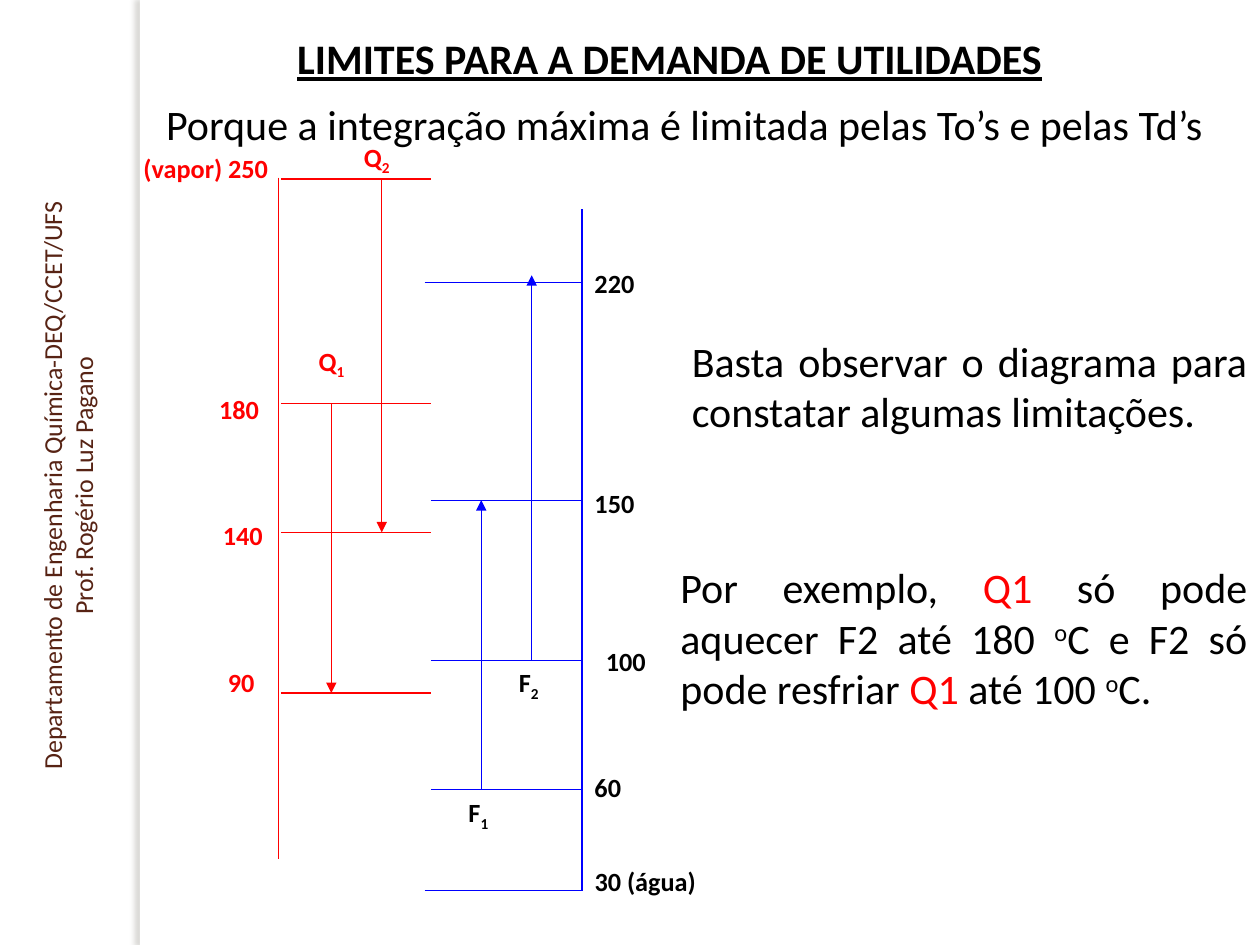
from dataclasses import dataclass

import lxml.etree
import pptx
import pptx.dml.color
import pptx.enum.shapes
import pptx.enum.text
import pptx.oxml.ns
import pptx.util

COLUMNS, ROWS = 100, 75
HOTTEST, HOTTEST_ROW, ROWS_PER_DEGREE = 250, 14.2, 0.255
ALIGN = pptx.enum.text.PP_ALIGN
ANCHOR = pptx.enum.text.MSO_ANCHOR


@dataclass(frozen=True)
class Theme:
    font: str = "Calibri"
    hot: str = "FF0000"
    cold: str = "0000FF"
    ink: str = "000000"
    paper: str = "FFFFFF"
    credit: str = "572314"
    shadow: str = "736F63"
    body_size: float = 24
    label_size: float = 15
    credit_size: float = 14.8
    thin: float = 0.75
    axis: float = 1


@dataclass(frozen=True)
class Box:
    column: float
    row: float
    columns: float
    rows: float


@dataclass(frozen=True)
class Run:
    text: str
    color: str = Theme.ink
    baseline: int = 0


@dataclass(frozen=True)
class Label:
    box: Box
    text: str
    color: str = Theme.ink
    subscript: str = ""


@dataclass(frozen=True)
class Level:
    temperature: float
    start: float
    end: float
    color: str
    drop: float = 0


@dataclass(frozen=True)
class Stream:
    column: float
    supply: float
    target: float
    color: str


HOT, COLD = Theme.hot, Theme.cold

LEVELS = [Level(temperature, 22.3, 34.2, HOT) for temperature in (250, 180, 140, 90)]
LEVELS += [Level(temperature, 34.2, 46.1, COLD) for temperature in (150, 100, 60)]
LEVELS += [Level(220, 33.7, 46.2, COLD, 0.55), Level(30, 33.7, 46.2, COLD, 0.4)]

STREAMS = [
    Stream(26.3, 180, 90, HOT),
    Stream(30.3, 250, 140, HOT),
    Stream(38.2, 60, 150, COLD),
    Stream(42.2, 100, 220, COLD),
]

LABELS = [
    Label(Box(10.4, 11.6, 12.9, 3.8), "(vapor) 250", HOT),
    Label(Box(16.4, 30.7, 6, 5.1), "180", HOT),
    Label(Box(16.7, 40.7, 6, 3.8), "140", HOT),
    Label(Box(17.1, 52.4, 5, 5.1), "90", HOT),
    Label(Box(24.3, 26.9, 5, 5.1), "Q", HOT, "1"),
    Label(Box(27.9, 10.7, 4.6, 3.3), "Q", HOT, "2"),
    Label(Box(36.2, 62.7, 5, 5.1), "F", subscript="1"),
    Label(Box(40.2, 52.4, 5, 5.1), "F", subscript="2"),
    Label(Box(46.2, 20.7, 6, 5.1), "220"),
    Label(Box(46.2, 38.2, 6, 3.8), "150"),
    Label(Box(47.1, 50.7, 6, 5.1), "100"),
    Label(Box(46.2, 60.7, 5, 5.1), "60"),
    Label(Box(46.2, 68.2, 10.9, 3.4), "30 (água)"),
]

EXAMPLE = [
    Run("Por exemplo, "), Run("Q1", HOT), Run(" só pode aquecer F2 até 180 "),
    Run("o", baseline=30), Run("C e F2 só pode resfriar "), Run("Q1", HOT),
    Run(" até 100 "), Run("o", baseline=30), Run("C."),
]


def column_at(column: float) -> int:
    return round(pptx.util.Inches(10) * column / COLUMNS)


def row_at(row: float) -> int:
    return round(pptx.util.Inches(7.5) * row / ROWS)


def temperature_row(temperature: float) -> float:
    return HOTTEST_ROW + (HOTTEST - temperature) * ROWS_PER_DEGREE


def rgb(color: str) -> pptx.dml.color.RGBColor:
    return pptx.dml.color.RGBColor.from_string(color)


def extent(box: Box) -> tuple[int, int, int, int]:
    return column_at(box.column), row_at(box.row), column_at(box.columns), row_at(box.rows)


def apply(target, values: dict) -> None:
    for name, value in values.items():
        setattr(target, name, value)


def write(shape, paragraphs: list[list[Run]], size: float, align=ALIGN.LEFT,
          anchor=ANCHOR.TOP, **emphasis) -> None:
    frame = shape.text_frame
    apply(frame, {"word_wrap": True, "vertical_anchor": anchor,
                  "auto_size": pptx.enum.text.MSO_AUTO_SIZE.NONE})
    font_format = {"name": Theme.font, "size": pptx.util.Pt(size), **emphasis}
    for index, runs in enumerate(paragraphs):
        paragraph = frame.add_paragraph() if index else frame.paragraphs[0]
        apply(paragraph, {"alignment": align, "space_before": pptx.util.Pt(0)})
        if shape.is_placeholder:
            properties = paragraph._p.get_or_add_pPr()
            properties.set("marL", "0")
            properties.set("indent", "0")
            lxml.etree.SubElement(properties, pptx.oxml.ns.qn("a:buNone"))
        for item in runs:
            for index_line, line in enumerate(item.text.split("\n")):
                if index_line:
                    paragraph.add_line_break()
                run = paragraph.add_run()
                run.text = line
                apply(run.font, font_format)
                run.font.color.rgb = rgb(item.color)
                if item.baseline:
                    run._r.get_or_add_rPr().set("baseline", str(item.baseline * 1000))


def place(shape, box: Box):
    apply(shape, dict(zip(("left", "top", "width", "height"), extent(box))))
    return shape


def draw_line(slide, start: tuple[float, float], end: tuple[float, float],
              color: str, width: float, arrow: bool = False) -> None:
    connector = slide.shapes.add_connector(
        pptx.enum.shapes.MSO_CONNECTOR.STRAIGHT,
        column_at(start[0]), row_at(start[1]), column_at(end[0]), row_at(end[1]))
    connector.line.color.rgb = rgb(color)
    connector.line.width = pptx.util.Pt(width)
    if arrow:
        lxml.etree.SubElement(connector.line._get_or_add_ln(),
                              pptx.oxml.ns.qn("a:tailEnd"), type="triangle")
    lxml.etree.SubElement(connector._element.spPr, pptx.oxml.ns.qn("a:effectLst"))


def draw_side_band(slide) -> None:
    band = slide.shapes.add_shape(pptx.enum.shapes.MSO_SHAPE.RECTANGLE,
                                  *extent(Box(11.1, 0, 0.8, ROWS)))
    band.shadow.inherit = False
    band.fill.solid()
    band.fill.fore_color.rgb = rgb(Theme.paper)
    band.line.fill.background()
    effects = band._element.spPr.find(pptx.oxml.ns.qn("a:effectLst"))
    distance = str(pptx.util.Pt(3))
    shadow = lxml.etree.SubElement(effects, pptx.oxml.ns.qn("a:outerShdw"), blurRad=distance,
                                   dist=distance, dir="10800000", rotWithShape="0")
    color = lxml.etree.SubElement(shadow, pptx.oxml.ns.qn("a:srgbClr"), val=Theme.shadow)
    lxml.etree.SubElement(color, pptx.oxml.ns.qn("a:alpha"), val="25000")
    credit = slide.shapes.add_textbox(*extent(Box(2, 10.4, 6.3, 56.3)))
    write(credit, [[Run("Departamento de Engenharia Química-DEQ/CCET/UFS", Theme.credit)],
                   [Run("Prof. Rogério Luz Pagano", Theme.credit)]],
          Theme.credit_size, ALIGN.CENTER, ANCHOR.BOTTOM)
    credit.text_frame._txBody.bodyPr.set("vert", "vert270")


def draw_diagram(slide) -> None:
    for level in LEVELS:
        row = temperature_row(level.temperature) + level.drop
        draw_line(slide, (level.start, row), (level.end, row), level.color, Theme.thin)
    for column, top, color in ((22.1, 14.1, HOT), (46.2, 16.6, COLD)):
        draw_line(slide, (column, top), (column, top + 54.1), color, Theme.axis)
    for stream in STREAMS:
        draw_line(slide, (stream.column, temperature_row(stream.supply)),
                  (stream.column, temperature_row(stream.target)),
                  stream.color, Theme.thin, arrow=True)
    for label in LABELS:
        runs = [Run(label.text, label.color)]
        if label.subscript:
            runs.append(Run(label.subscript, label.color, -25))
        write(slide.shapes.add_textbox(*extent(label.box)), [runs], Theme.label_size, bold=True)


def main() -> None:
    presentation = pptx.Presentation()
    apply(presentation, {"slide_width": column_at(COLUMNS), "slide_height": row_at(ROWS)})
    slide = presentation.slides.add_slide(presentation.slide_layouts.get_by_name("Two Content"))
    title, remark, example = slide.placeholders
    write(place(title, Box(12.5, 2.1, 81.3, 5)), [[Run("LIMITES PARA A DEMANDA DE UTILIDADES")]],
          Theme.body_size, ALIGN.CENTER, bold=True, underline=True)
    write(place(remark, Box(53.9, 26.1, 46.1, 9.1)),
          [[Run("Basta observar o diagrama para\nconstatar algumas limitações.")]],
          Theme.body_size, ALIGN.JUSTIFY)
    write(place(example, Box(53, 44.1, 47, 13.1)), [EXAMPLE], Theme.body_size, ALIGN.JUSTIFY)
    draw_side_band(slide)
    draw_diagram(slide)
    reason = slide.shapes.add_textbox(*extent(Box(12.2, 7.3, 87.8, 5)))
    write(reason, [[Run("Porque a integração máxima é limitada pelas To’s e pelas Td’s")]],
          Theme.body_size)
    presentation.save("out.pptx")


if __name__ == "__main__":
    main()
